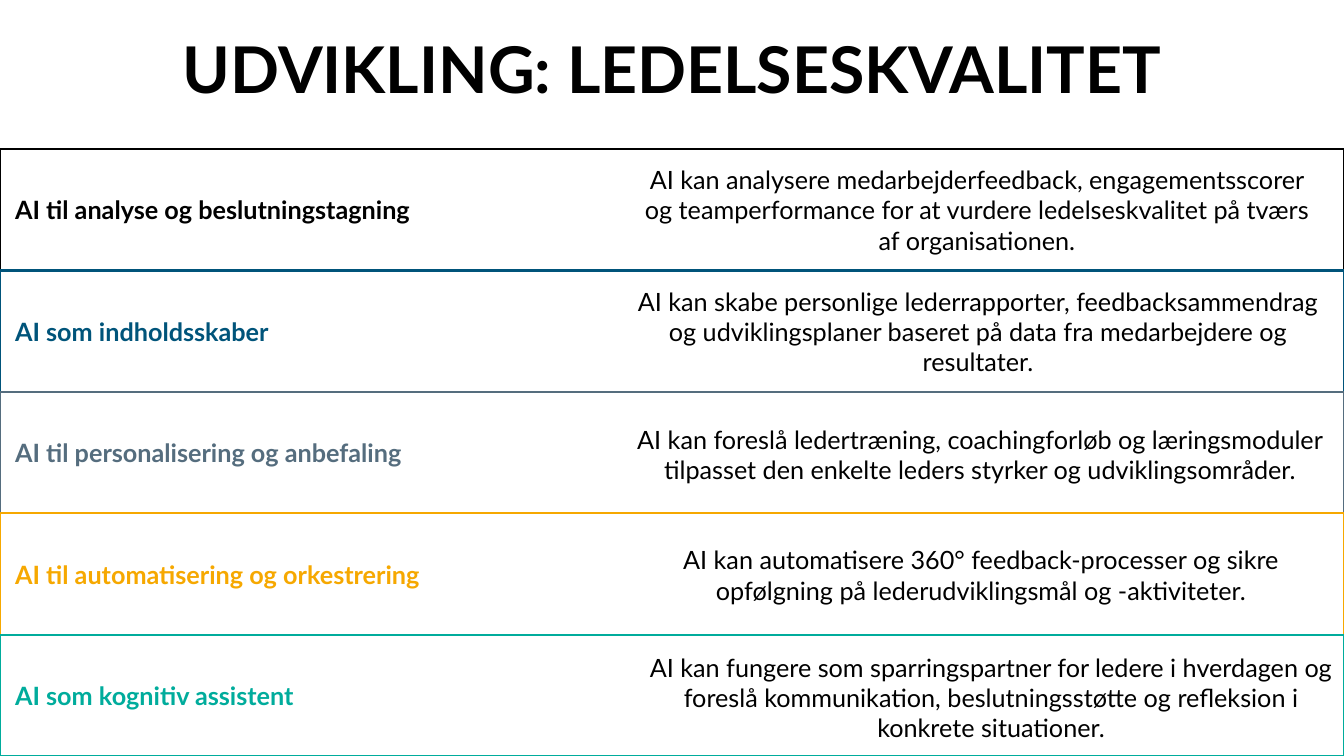
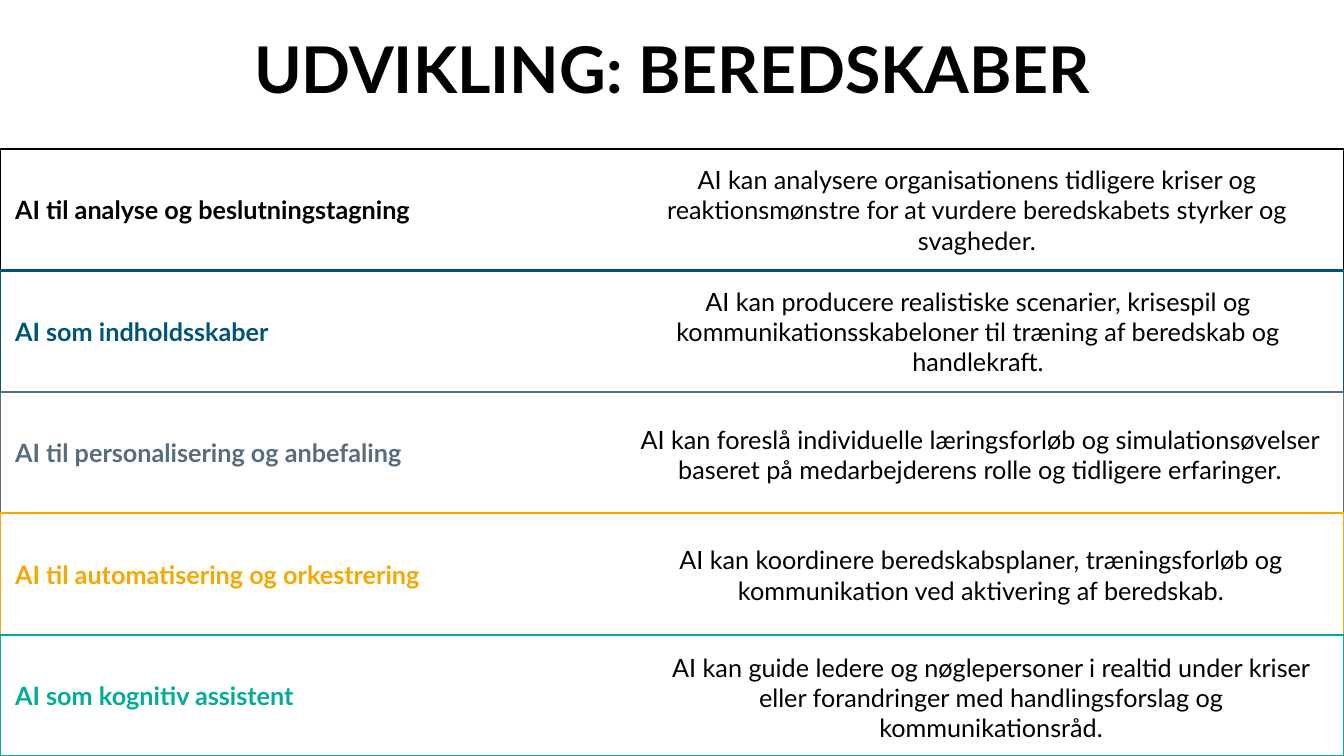
from dataclasses import dataclass

from pptx import Presentation
from pptx.dml.color import RGBColor
from pptx.enum.shapes import MSO_SHAPE as Shape
from pptx.enum.text import MSO_ANCHOR as Anchor, PP_ALIGN as Align
from pptx.util import Inches, Pt

WIDTH, HEIGHT = 13.33, 7.5
TITLE_HEIGHT = 1.34
ROWS_TOP = 1.48
TEXT_WIDTH = 7
LABEL_INSET = 0.15
BLACK = "000000"
BASE = dict(name="Lato", size=Pt(18), bold=False)
LABEL = BASE | dict(bold=True)
TITLE = LABEL | dict(size=Pt(46))


@dataclass(frozen=True)
class Category:
    label: str
    colour: str
    text_left: float
    text_drop: float = 0


@dataclass(frozen=True)
class Topic:
    title: str
    texts: tuple[str, ...]


CATEGORIES = (
    Category("AI til analyse og beslutningstagning", BLACK, 6.19),
    Category("AI som indholdsskaber", "00547A", 6.2),
    Category("AI til personalisering og anbefaling", "556D7E", 6.22, 0.02),
    Category("AI til automatisering og orkestrering", "F6A800", 6.23, 0.01),
    Category("AI som kognitiv assistent", "00AC9C", 6.33, 0.02),
)
ROW_HEIGHT = (HEIGHT - ROWS_TOP) / len(CATEGORIES)

TOPICS = (
    Topic("UDVIKLING: LEDELSESKVALITET", (
        "AI kan analysere medarbejderfeedback, engagementsscorer og "
        "teamperformance for at vurdere ledelseskvalitet på tværs af organisationen.",
        "AI kan skabe personlige lederrapporter, feedbacksammendrag og "
        "udviklingsplaner baseret på data fra medarbejdere og resultater.",
        "AI kan foreslå ledertræning, coachingforløb og læringsmoduler "
        "tilpasset den enkelte leders styrker og udviklingsområder.",
        "AI kan automatisere 360° feedback-processer og sikre opfølgning på "
        "lederudviklingsmål og -aktiviteter.",
        "AI kan fungere som sparringspartner for ledere i hverdagen og foreslå "
        "kommunikation, beslutningsstøtte og refleksion i konkrete situationer.",
    )),
    Topic("UDVIKLING: BEREDSKABER", (
        "AI kan analysere organisationens tidligere kriser og reaktionsmønstre "
        "for at vurdere beredskabets styrker og svagheder.",
        "AI kan producere realistiske scenarier, krisespil og "
        "kommunikationsskabeloner til træning af beredskab og handlekraft.",
        "AI kan foreslå individuelle læringsforløb og simulationsøvelser "
        "baseret på medarbejderens rolle og tidligere erfaringer.",
        "AI kan koordinere beredskabsplaner, træningsforløb og kommunikation "
        "ved aktivering af beredskab.",
        "AI kan guide ledere og nøglepersoner i realtid under kriser eller "
        "forandringer med handlingsforslag og kommunikationsråd.",
    )),
)


def rgb(colour: str) -> RGBColor:
    return RGBColor.from_string(colour)


def write(sp, text: str, style: dict, colour: str = BLACK, align=Align.CENTER) -> None:
    tf = sp.text_frame
    tf.word_wrap = True
    tf.vertical_anchor = Anchor.MIDDLE
    p = tf.paragraphs[0]
    p.alignment = align
    r = p.add_run()
    r.text = text
    for name, value in style.items():
        setattr(r.font, name, value)
    r.font.color.rgb = rgb(colour)


def add_text(s, left: float, top: float, width: float, height: float,
             text: str, style: dict) -> None:
    box = s.shapes.add_textbox(*map(Inches, (left, top, width, height)))
    write(box, text, style)


def add_row(s, top: float, category: Category) -> None:
    """Draw a full-width outlined row with its category label."""
    sp = s.shapes.add_shape(
        Shape.RECTANGLE, *map(Inches, (0, top, WIDTH, ROW_HEIGHT)))
    sp.shadow.inherit = False
    sp.fill.background()
    sp.line.color.rgb = rgb(category.colour)
    sp.line.width = Pt(1.5)
    sp.text_frame.margin_left = Inches(LABEL_INSET)
    write(sp, category.label, LABEL, category.colour, Align.LEFT)


def add_topic(prs, topic: Topic) -> None:
    s = prs.slides.add_slide(prs.slide_layouts[6])
    add_text(s, 0, 0, WIDTH, TITLE_HEIGHT, topic.title, TITLE)
    for i, (category, text) in enumerate(zip(CATEGORIES, topic.texts)):
        top = ROWS_TOP + i * ROW_HEIGHT
        add_row(s, top, category)
        add_text(s, category.text_left, top + category.text_drop,
                 TEXT_WIDTH, ROW_HEIGHT, text, BASE)


def main() -> None:
    prs = Presentation()
    prs.slide_width, prs.slide_height = Inches(WIDTH), Inches(HEIGHT)
    for topic in TOPICS:
        add_topic(prs, topic)
    prs.save("out.pptx")


if __name__ == "__main__":
    main()
